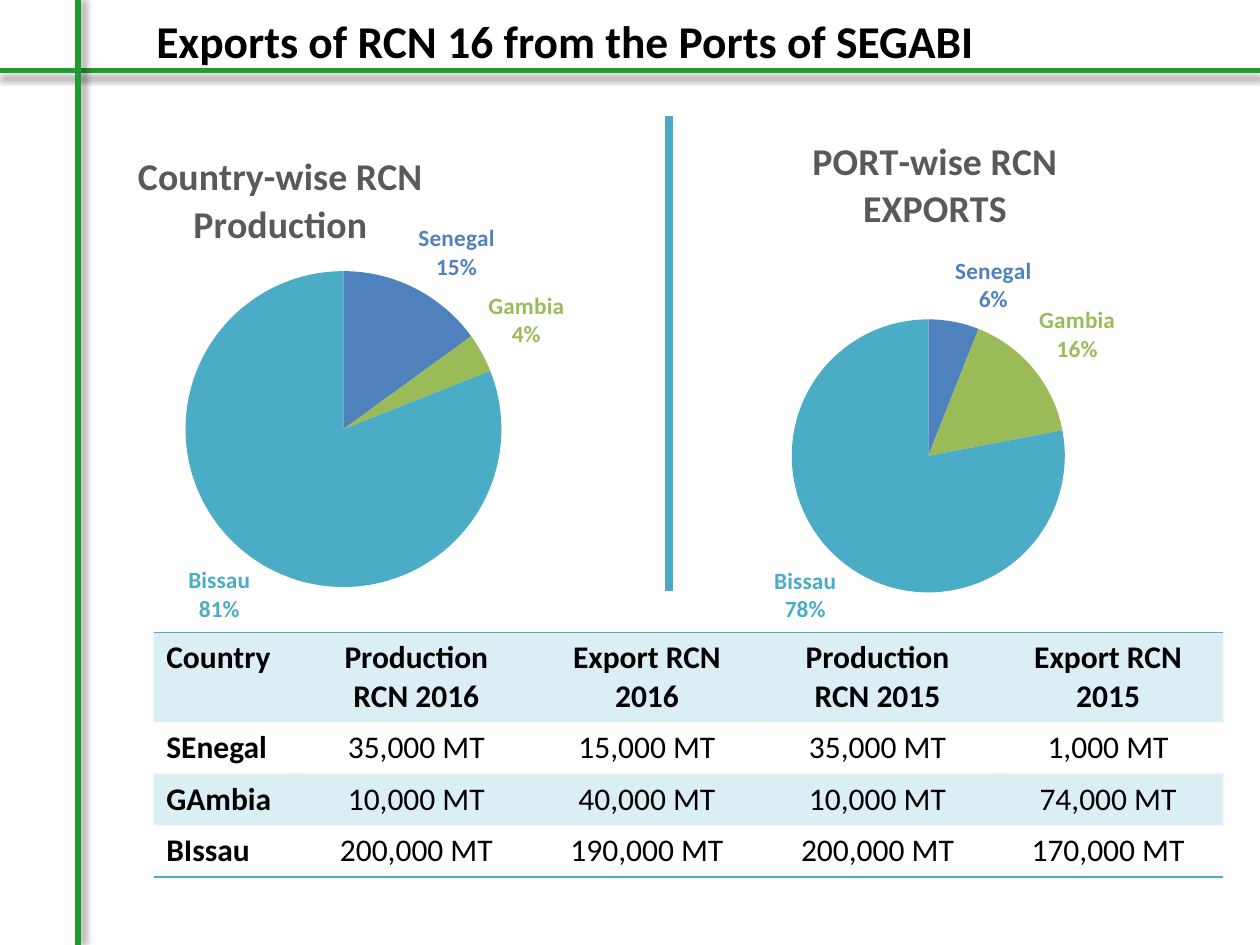
from lxml import etree
from pptx import Presentation
from pptx.chart.data import CategoryChartData
from pptx.dml.color import RGBColor
from pptx.enum.chart import XL_CHART_TYPE, XL_LABEL_POSITION
from pptx.enum.shapes import MSO_CONNECTOR
from pptx.enum.text import MSO_ANCHOR, PP_ALIGN
from pptx.oxml import parse_xml
from pptx.oxml.ns import nsdecls, qn
from pptx.util import Inches, Pt

PIE, OUTSIDE = XL_CHART_TYPE.PIE, XL_LABEL_POSITION.OUTSIDE_END
STRAIGHT = MSO_CONNECTOR.STRAIGHT
LEFT, CENTER, MIDDLE = PP_ALIGN.LEFT, PP_ALIGN.CENTER, MSO_ANCHOR.MIDDLE

FONT = "Calibri"
BLACK = RGBColor(0x00, 0x00, 0x00)
GRAY = RGBColor(0x59, 0x59, 0x59)
GREEN = RGBColor(0x1E, 0x9C, 0x2E)
DIVIDER = RGBColor(0x4A, 0xA9, 0xC3)
TEAL = RGBColor(0x4B, 0xAC, 0xC6)
SLICES = [RGBColor(0x4F, 0x81, 0xBD), RGBColor(0x9B, 0xBB, 0x59), TEAL]
PLAIN_TABLE = "{2D5ABB26-0587-4C30-8999-92F81FD0307C}"

COUNTRIES = ["Senegal", "Gambia", "Bissau"]
ROWS = [
    ["Country", "Production RCN 2016", "Export RCN 2016",
     "Production RCN 2015", "Export RCN 2015"],
    ["SEnegal", "35,000 MT", "15,000 MT", "35,000 MT", "1,000 MT"],
    ["GAmbia", "10,000 MT", "40,000 MT", "10,000 MT", "74,000 MT"],
    ["BIssau", "200,000 MT", "190,000 MT", "200,000 MT", "170,000 MT"],
]


class SlideBuilder:
    """Holds the current slide and draws elements in one style."""

    def __init__(self, page):
        self.page = page

    def style(self, font, size, color, bold=True):
        font.name, font.size, font.bold = FONT, Pt(size), bold
        font.color.rgb = color

    def title(self, text, left, top, width, height):
        box = self.page.shapes.title
        box.left, box.top = Inches(left), Inches(top)
        box.width, box.height = Inches(width), Inches(height)
        frame = box.text_frame
        frame.text = text
        frame.word_wrap = False
        frame.vertical_anchor = MIDDLE
        para = frame.paragraphs[0]
        para.alignment = LEFT
        self.style(para.runs[0].font, 26, BLACK)

    def line(self, start, end, color, width, shadow_angle=None):
        line = self.page.shapes.add_connector(
            STRAIGHT, *(Inches(value) for value in (*start, *end)))
        line.line.color.rgb = color
        line.line.width = Pt(width)
        effects = etree.SubElement(line.element.spPr, qn("a:effectLst"))
        if shadow_angle is not None:
            effects.append(parse_xml(
                f'<a:outerShdw {nsdecls("a")} blurRad="{Pt(4)}" dist="{Pt(3)}"'
                f' dir="{shadow_angle * 60000}" rotWithShape="0">'
                '<a:srgbClr val="000000"><a:alpha val="40000"/></a:srgbClr>'
                '</a:outerShdw>'))

    def place(self, parent, index, target="", **fractions):
        """Give a chart part a fixed place, as fractions of the chart."""
        for old in parent.findall(qn("c:layout")):
            parent.remove(old)
        modes = "".join(f'<c:{key}Mode val="edge"/>' for key in "xy")
        values = "".join(f'<c:{key} val="{value}"/>'
                         for key, value in fractions.items())
        parent.insert(index, parse_xml(
            f'<c:layout {nsdecls("c")}><c:manualLayout>{target}{modes}{values}'
            '</c:manualLayout></c:layout>'))

    def pie(self, heading, values, left, title_place, plot_place):
        data = CategoryChartData()
        data.categories = COUNTRIES
        data.add_series("Series 1", values)
        chart = self.page.shapes.add_chart(
            PIE, Inches(left), Inches(0.92), Inches(4.75), Inches(4.25), data).chart
        chart.has_legend = False
        self.style(chart.font, 10, BLACK, False)

        # Heading
        chart.has_title = True
        frame = chart.chart_title.text_frame
        frame.text = heading
        for para in frame.paragraphs:
            para.alignment = CENTER
            self.style(para.runs[0].font, 21.6, GRAY)
        self.place(chart.chart_title.element, 1, x=title_place[0], y=title_place[1])
        plot_area = chart.element.find(".//" + qn("c:plotArea"))
        self.place(plot_area, 0, '<c:layoutTarget val="inner"/>',
                   **dict(zip("xywh", plot_place)))

        # Slices and their labels
        plot = chart.plots[0]
        plot.vary_by_categories = True
        series = plot.series[0]
        labels = series.data_labels
        labels.show_category_name = labels.show_percentage = True
        labels.show_value = False
        labels.position = OUTSIDE
        for index, color in enumerate(SLICES):
            point = series.points[index]
            point.format.fill.solid()
            point.format.fill.fore_color.rgb = color
            self.style(point.data_label.font, 13.3, color)
            point.data_label.position = OUTSIDE
        for label in series.data_labels._element.findall(qn("c:dLbl")):
            for name, shown in (("Val", 0), ("CatName", 1), ("Percent", 1)):
                label.find(qn(f"c:show{name}")).set("val", str(shown))
            etree.SubElement(label, qn("c:separator")).text = "\n"

    def border(self, cell, side):
        cell._tc.get_or_add_tcPr().insert(0, parse_xml(
            f'<a:{side} {nsdecls("a")} w="{Pt(1)}"><a:solidFill>'
            f'<a:srgbClr val="{TEAL}"/></a:solidFill></a:{side}>'))

    def tint(self, cell):
        cell.fill.solid()
        cell.fill.fore_color.rgb = TEAL
        color = cell._tc.tcPr.find(".//" + qn("a:srgbClr"))
        etree.SubElement(color, qn("a:alpha")).set("val", "20000")

    def table(self, rows, left, top, widths, heights):
        frame = self.page.shapes.add_table(
            len(rows), len(widths), Inches(left), Inches(top),
            Inches(sum(widths)), Inches(sum(heights)))
        table = frame.table
        table.first_row = table.horz_banding = False
        table._tbl.tblPr.find(qn("a:tableStyleId")).text = PLAIN_TABLE
        for column, width in zip(table.columns, widths):
            column.width = Inches(width)
        for row, height in zip(table.rows, heights):
            row.height = Inches(height)
        for row, texts in enumerate(rows):
            for column, text in enumerate(texts):
                cell = table.cell(row, column)
                cell.text = text
                para = cell.text_frame.paragraphs[0]
                para.alignment = CENTER if column else LEFT
                self.style(para.runs[0].font, 18, BLACK, row == 0 or column == 0)
                if row % 2 == 0:
                    self.tint(cell)
                else:
                    cell.fill.background()
                if row == 0:
                    self.border(cell, "lnT")
                elif row == len(rows) - 1:
                    self.border(cell, "lnB")


def main():
    deck = Presentation()
    deck.slide_width, deck.slide_height = Inches(10), Inches(7.5)
    builder = SlideBuilder(deck.slides.add_slide(deck.slide_layouts[5]))

    # Frame lines and title
    builder.line((0, 0.56), (10, 0.56), GREEN, 3, shadow_angle=90)
    builder.line((0.62, 0), (0.62, 7.5), GREEN, 3, shadow_angle=0)
    builder.title("Exports of RCN 16 from the Ports of SEGABI", 1.14, 0.05, 6.84, 0.54)

    # Pies either side of the divider
    builder.pie("PORT-wise RCN\nEXPORTS", [6, 16, 78], 5.04,
                (0.29, 0.03), (0.26, 0.38, 0.46, 0.51))
    builder.pie("Country-wise RCN Production", [15, 4, 81], 0.47,
                (0.12, 0.05), (0.21, 0.29, 0.53, 0.59))
    builder.line((5.31, 0.92), (5.31, 4.69), DIVIDER, 4.5)

    # Tonnage by country
    builder.table(ROWS, 1.22, 5.02, [1.17] + [1.83] * 4, [0.7] + [0.41] * 3)
    deck.save("out.pptx")


if __name__ == "__main__":
    main()
